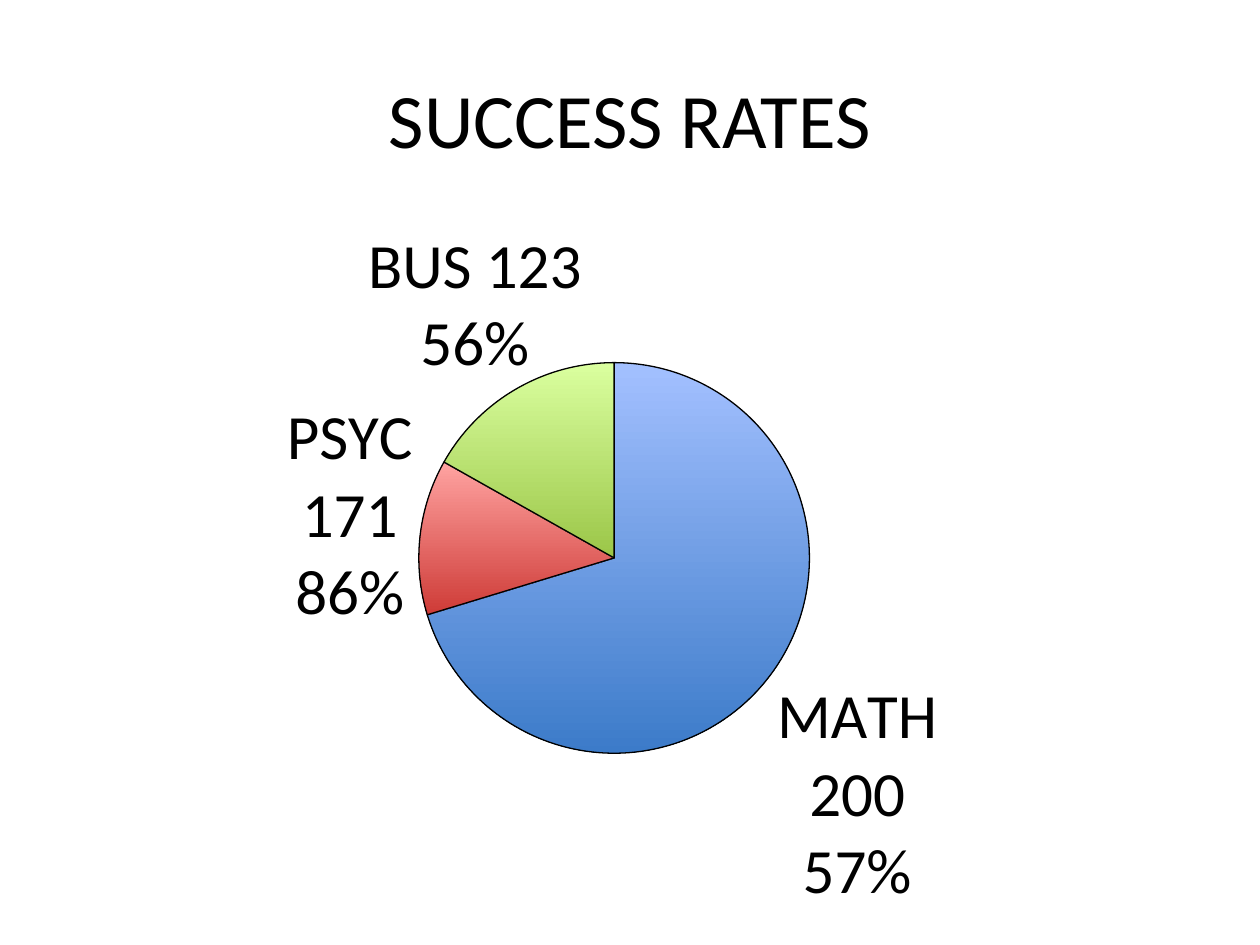
from lxml import etree
from pptx import Presentation
from pptx import util as u
from pptx.chart.data import CategoryChartData
from pptx.dml.color import RGBColor
from pptx.enum import chart as ch, text as tx

BLACK = RGBColor(0x00, 0x00, 0x00)
FONT = "Calibri"
WIDE, HIGH = u.Inches(10), u.Inches(7.5)
RATES = [
    ("MATH 200", 71, "57%", RGBColor(0xA3, 0xC0, 0xFF), RGBColor(0x3C, 0x7B, 0xC9)),
    ("PSYC 171", 13, "86%", RGBColor(0xFF, 0xA3, 0xA1), RGBColor(0xCE, 0x3B, 0x37)),
    ("BUS 123", 17, "56%", RGBColor(0xDA, 0xFF, 0x9F), RGBColor(0x9B, 0xC6, 0x48)),
]
SHIFTS = {1: (0, 0.13), 2: (0.06, 0)}


def share(x, y, w, h):
    """Turn shares of the slide into lengths."""
    return int(x * WIDE), int(y * HIGH), int(w * WIDE), int(h * HIGH)


def write(frame, *lines, size=36, color=BLACK, align=tx.PP_ALIGN.CENTER):
    """Fill a text frame with one paragraph per line."""
    for i, line in enumerate(lines):
        para = frame.paragraphs[0] if i == 0 else frame.add_paragraph()
        para.alignment = align
        run = para.add_run()
        run.text = line
        run.font.name, run.font.size = FONT, u.Pt(size)
        run.font.color.rgb = color


def add_title(slide, words, box):
    """Add the centred title."""
    frame = slide.shapes.add_textbox(*box).text_frame
    frame.word_wrap = True
    frame.vertical_anchor = tx.MSO_ANCHOR.MIDDLE
    write(frame, words, size=44)


def shade(fill, top, base):
    """Fill with a gradient that runs down from top to base."""
    fill.gradient()
    fill.gradient_angle = 270
    for stop, color, place in zip(fill.gradient_stops, (top, base), (0, 1)):
        stop.color.rgb, stop.position = color, place


def lay_out(part, rank, **items):
    """Give a chart part a manual layout in shares of the chart."""
    space = etree.QName(part).namespace
    for old in part.findall(f"{{{space}}}layout"):
        part.remove(old)
    outer = etree.Element(f"{{{space}}}layout")
    inner = etree.SubElement(outer, f"{{{space}}}manualLayout")
    for name, val in items.items():
        etree.SubElement(inner, f"{{{space}}}{name}", val=str(val))
    part.insert(rank, outer)


def add_pie(slide, rates, box):
    """Add the pie with a gradient and a label for each course."""
    data = CategoryChartData()
    data.categories = [rate[0] for rate in rates]
    data.add_series("Series 1", [rate[1] for rate in rates])
    chart = slide.shapes.add_chart(ch.XL_CHART_TYPE.PIE, *box, data).chart
    chart.has_legend = chart.has_title = False
    chart.font.name, chart.font.size = FONT, u.Pt(10)
    chart.font.color.rgb = BLACK
    plot = chart.plots[0]
    plot.vary_by_categories = True
    tags = plot.series[0].data_labels
    tags.show_category_name = tags.show_percentage = True
    tags.show_value = False
    tags.font.size = u.Pt(36)
    for i, (name, _, rate, top, base) in enumerate(rates):
        point = plot.series[0].points[i]
        shade(point.format.fill, top, base)
        point.format.line.color.rgb = BLACK
        point.format.line.width = u.Pt(0.75)
        write(point.data_label.text_frame, name, rate)
        point.data_label.position = ch.XL_LABEL_POSITION.OUTSIDE_END
    for i, label in enumerate(plot._element.findall(".//{*}dLbl")):
        if i in SHIFTS:
            lay_out(label, 1, x=SHIFTS[i][0], y=SHIFTS[i][1])
    for lead in plot._element.findall(".//{*}showLeaderLines"):
        lead.set("val", "0")
    lay_out(plot._element.getparent(), 0, layoutTarget="inner", xMode="edge",
            yMode="edge", x=0.33, y=0.21, w=0.34, h=0.53)


def main():
    """Build the slide and save it."""
    deck = Presentation()
    deck.slide_width, deck.slide_height = WIDE, HIGH
    slide = deck.slides.add_slide(deck.slide_layouts[6])
    add_pie(slide, RATES, share(0.025, 0.22, 0.925, 0.78))
    add_title(slide, "SUCCESS RATES", share(0.05, 0.04, 0.9, 0.17))
    deck.save("out.pptx")


if __name__ == "__main__":
    main()
